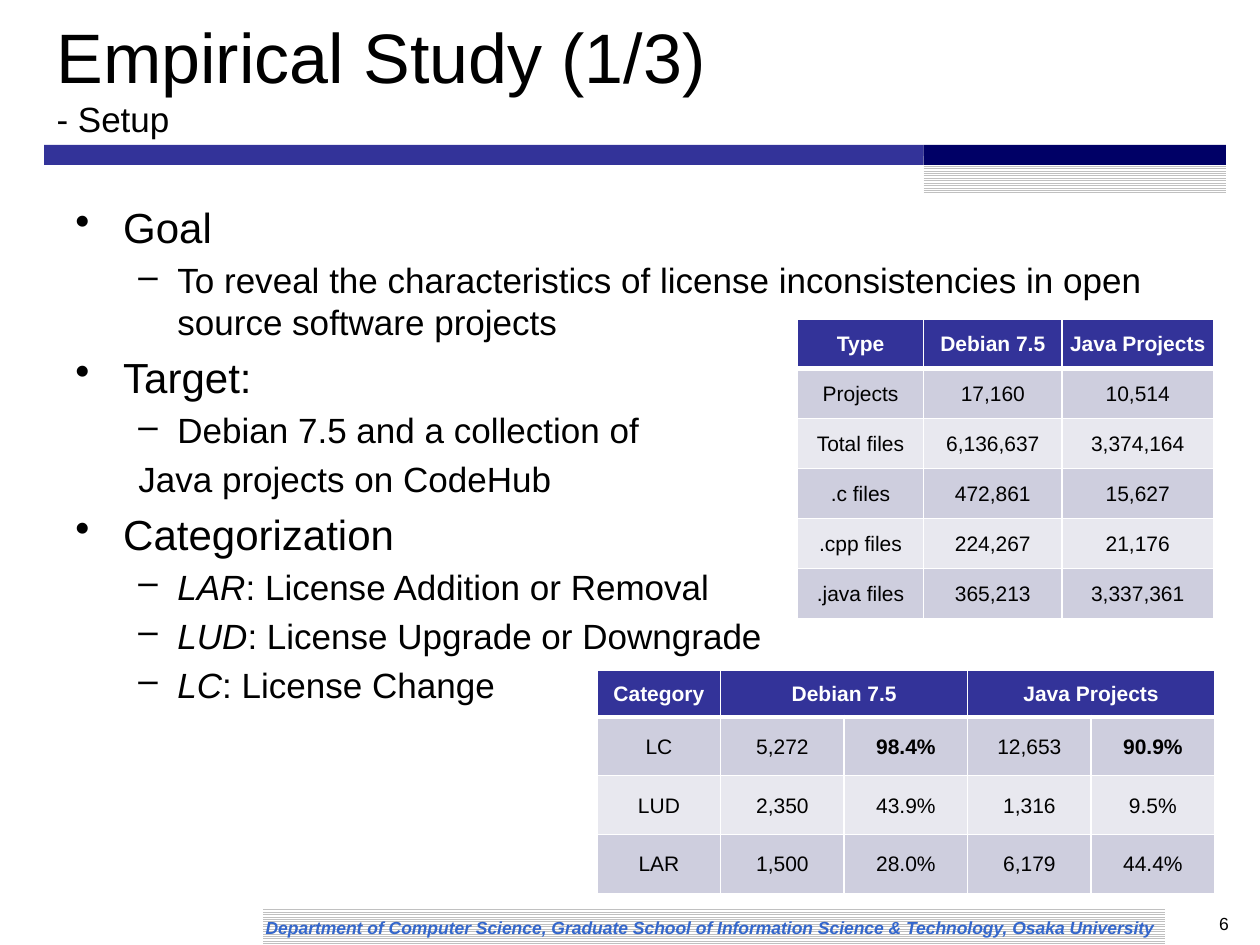
from pptx import Presentation
from pptx.dml.color import RGBColor
from pptx.enum.dml import MSO_PATTERN
from pptx.enum.shapes import MSO_SHAPE
from pptx.enum.text import MSO_ANCHOR, PP_ALIGN
from pptx.oxml import parse_xml
from pptx.oxml.ns import nsdecls
from pptx.util import Inches, Pt

BLACK = RGBColor(0x00, 0x00, 0x00)
WHITE = RGBColor(0xFF, 0xFF, 0xFF)
INDIGO = RGBColor(0x33, 0x33, 0x99)
NAVY = RGBColor(0x00, 0x00, 0x66)
BLUE = RGBColor(0x33, 0x66, 0xCC)
GREY = RGBColor(0xC0, 0xC0, 0xC0)
BANDS = RGBColor(0xCE, 0xCE, 0xDE), RGBColor(0xE8, 0xE8, 0xEF)
COLS, ROWS = 100, 75

GOALS = [
    (0, "•", [("Goal", False)]),
    (1, "–", [("To reveal the characteristics of license inconsistencies "
               "in open source software projects", False)]),
    (0, "•", [("Target:", False)]),
    (1, "–", [("Debian 7.5 and a collection of", False)]),
    (1, "", [("Java projects on CodeHub", False)]),
    (0, "•", [("Categorization", False)]),
    (1, "–", [("LAR", True), (": License Addition or Removal", False)]),
    (1, "–", [("LUD", True), (": License Upgrade or Downgrade", False)]),
    (1, "–", [("LC", True), (": License Change", False)]),
]
PROJECTS = [
    ["Type", "Debian 7.5", "Java Projects"],
    ["Projects", "17,160", "10,514"],
    ["Total files", "6,136,637", "3,374,164"],
    [".c files", "472,861", "15,627"],
    [".cpp files", "224,267", "21,176"],
    [".java files", "365,213", "3,337,361"],
]
CATEGORIES = [
    ["Category", "Debian 7.5", "", "Java Projects", ""],
    ["LC", "5,272", "98.4%", "12,653", "90.9%"],
    ["LUD", "2,350", "43.9%", "1,316", "9.5%"],
    ["LAR", "1,500", "28.0%", "6,179", "44.4%"],
]


class Deck:
    font = "Arial"

    def __init__(self):
        self.prs = Presentation()
        self.prs.slide_width, self.prs.slide_height = Inches(10), Inches(7.5)
        self.s = self.prs.slides.add_slide(self.prs.slide_layouts[6])

    def x(self, cols):
        return int(self.prs.slide_width * cols / COLS)

    def y(self, rows):
        return int(self.prs.slide_height * rows / ROWS)

    def box(self, left, top, width, height):
        return self.x(left), self.y(top), self.x(width), self.y(height)

    def bar(self, at, color, striped=False):
        sp = self.s.shapes.add_shape(MSO_SHAPE.RECTANGLE, *self.box(*at))
        sp.shadow.inherit = False
        sp.line.fill.background()
        if striped:
            sp.fill.patterned()
            sp.fill.pattern = MSO_PATTERN.LIGHT_HORIZONTAL
            sp.fill.fore_color.rgb, sp.fill.back_color.rgb = color, WHITE
        else:
            sp.fill.solid()
            sp.fill.fore_color.rgb = color

    def run(self, p, text, size, color=BLACK, bold=False, italic=False):
        r = p.add_run()
        r.text = text
        f = r.font
        f.name, f.size, f.bold, f.italic = self.font, Pt(size), bold, italic
        f.color.rgb = color

    def text(self, at, anchor=MSO_ANCHOR.TOP):
        tf = self.s.shapes.add_textbox(*self.box(*at)).text_frame
        tf.word_wrap = True
        tf.vertical_anchor = anchor
        return tf

    def bullets(self, at, items):
        tf = self.text(at)
        for i, (level, mark, runs) in enumerate(items):
            p = tf.paragraphs[0] if i == 0 else tf.add_paragraph()
            p.level = level
            size = (24, 20)[level]
            margin, indent = ((3.8, -3.8), (8.1, -3.1))[level] if mark else (5, 0)
            pPr = p._p.get_or_add_pPr()
            pPr.set("marL", str(self.x(margin)))
            pPr.set("indent", str(self.x(indent)))
            if mark:
                pPr.append(parse_xml(f'<a:buChar {nsdecls("a")} char="{mark}"/>'))
            p.space_before = Pt(0.2 * size if i else 0)
            for text, italic in runs:
                self.run(p, text, size, italic=italic)

    def border(self, cell, **widths):
        tcPr = cell._tc.get_or_add_tcPr()
        for side in "BTRL":
            tcPr.insert(0, parse_xml(
                f'<a:ln{side} {nsdecls("a")} w="{Pt(widths.get(side, 1))}"><a:solidFill>'
                f'<a:srgbClr val="{WHITE}"/></a:solidFill></a:ln{side}>'))

    def table(self, at, rows, widths, heights, spans=(), bold=()):
        tbl = self.s.shapes.add_table(len(rows), len(widths), *self.box(*at)).table
        for col, width in zip(tbl.columns, widths):
            col.width = self.x(width)
        for row, height in zip(tbl.rows, heights):
            row.height = self.y(height)
        for first, last in spans:
            tbl.cell(0, first).merge(tbl.cell(0, last))
        for i, row in enumerate(rows):
            for j, value in enumerate(row):
                cell = tbl.cell(i, j)
                cell.fill.solid()
                cell.fill.fore_color.rgb = BANDS[(i - 1) % 2] if i else INDIGO
                self.border(cell, **{0: {"B": 3}, 1: {"T": 3}}.get(i, {}))
                cell.margin_left = cell.margin_right = cell.margin_top = Inches(0.01)
                cell.margin_bottom = 0
                cell.vertical_anchor = MSO_ANCHOR.MIDDLE
                p = cell.text_frame.paragraphs[0]
                p.alignment = PP_ALIGN.CENTER
                if value:
                    self.run(p, value, 12, BLACK if i else WHITE,
                             bold=i == 0 or (i, j) in bold)


def main():
    d = Deck()
    d.bar((20.9, 72, 71.6, 3), GREY, striped=True)
    d.bar((3.5, 11.5, 69.8, 1.6), INDIGO)
    d.bar((73.3, 12.4, 24, 3), GREY, striped=True)
    d.bar((73.3, 11.5, 24, 1.6), NAVY)
    footer = d.text((20.1, 72.3, 73.2, 2.7), MSO_ANCHOR.MIDDLE)
    d.run(footer.paragraphs[0], "Department of Computer Science, Graduate School of "
          "Information Science & Technology, Osaka University", 10, BLUE, True, True)

    title = d.text((3.5, 1.3, 93.8, 9.5), MSO_ANCHOR.MIDDLE).paragraphs[0]
    d.run(title, "Empirical Study (1/3)", 40)
    title.add_line_break()
    d.run(title, "- Setup", 20)
    d.bullets((5, 15.5, 90, 52.8), GOALS)

    number = d.text((92.5, 72, 6, 3)).paragraphs[0]
    number.alignment = PP_ALIGN.RIGHT
    d.run(number, "6", 10)

    d.table((63.3, 25.3, 33, 23.8), PROJECTS, (10, 11, 12), [23.8 / 6] * 6)
    d.table((47.4, 53.2, 49, 17.7), CATEGORIES, [9.8] * 5, [3.7] + [14 / 3] * 3,
            spans=((1, 2), (3, 4)), bold=((1, 2), (1, 4)))
    d.prs.save("out.pptx")


if __name__ == "__main__":
    main()
